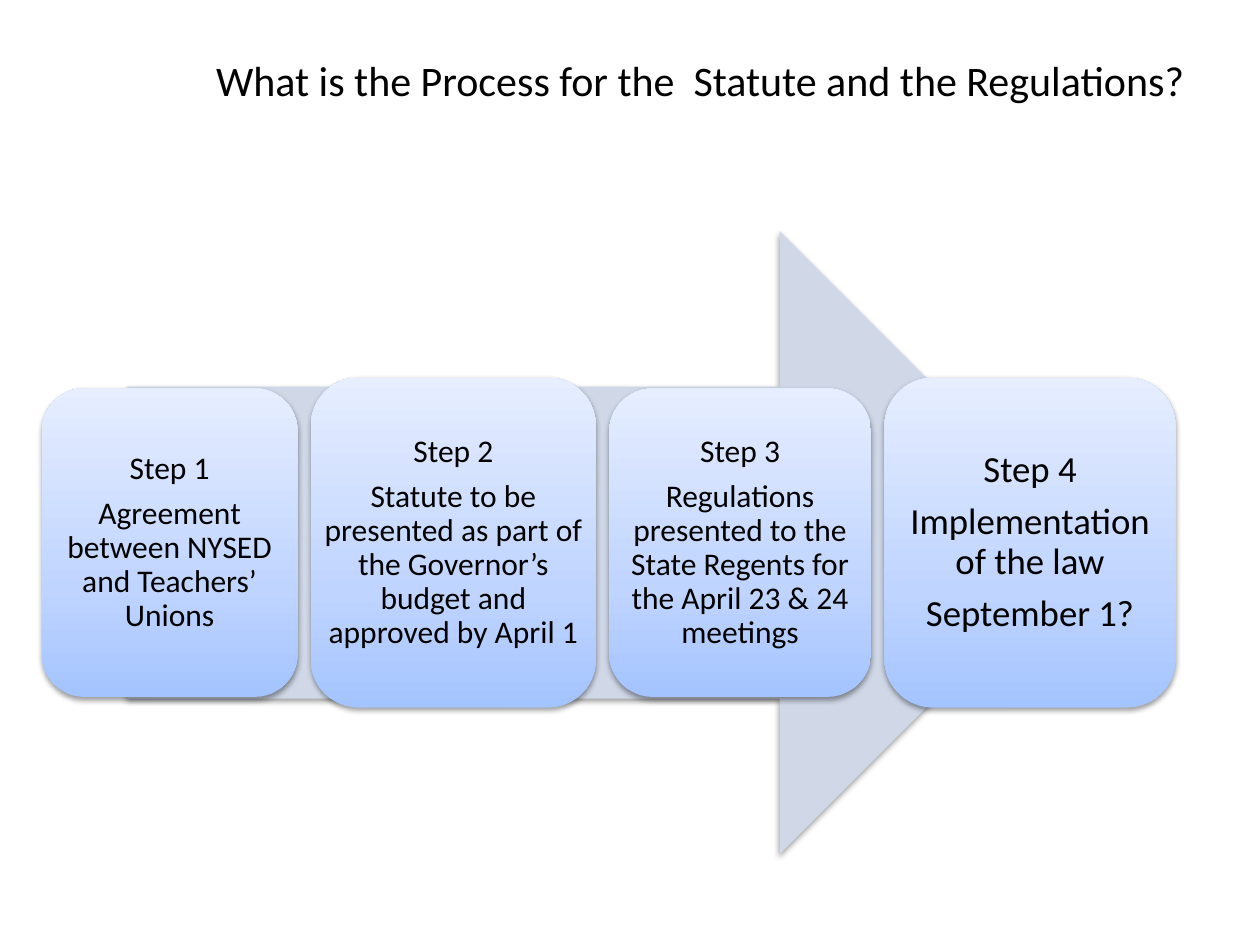
"""Build a one-slide process diagram: four steps along a broad arrow."""
import copy

import pptx
import pptx.dml.color
import pptx.enum.shapes
import pptx.enum.text
import pptx.oxml
import pptx.oxml.ns
import pptx.util

Cm = pptx.util.Cm
Pt = pptx.util.Pt
ALIGN = pptx.enum.text.PP_ALIGN
SHAPE = pptx.enum.shapes.MSO_SHAPE
COLORS = {"text": "000000", "arrow": "D0D8E8", "shadow": "000000",
          "bottom": "A4C4FF", "middle": "BFD4FF", "top": "E6EEFF"}
CENTER, GAP = 10.94, 0.27


def write(frame, text, size=18, align=ALIGN.CENTER, inset=0.18, line=0.9, after=0.35):
    """Fill a text frame with one paragraph per line of text."""
    frame.word_wrap = True
    frame.vertical_anchor = pptx.enum.text.MSO_ANCHOR.MIDDLE
    frame.margin_left = frame.margin_right = Cm(inset)
    frame.margin_top = frame.margin_bottom = Cm(inset)
    frame.text = text
    for para in frame.paragraphs:
        para.alignment = align
        para.line_spacing = line
        para.space_after = Pt(size * after)
        for span in para.runs:
            span.font.name = "Calibri"
            span.font.size = Pt(size)
            span.font.color.rgb = pptx.dml.color.RGBColor.from_string(COLORS["text"])


def add_shadowed(page, kind, left, width, height):
    """Add a borderless shape on the center line with a soft shadow below."""
    shape = page.shapes.add_shape(kind, Cm(left), Cm(CENTER - height / 2), Cm(width), Cm(height))
    shape.line.fill.background()
    shape.shadow.inherit = False
    effects = shape._element.spPr.find(pptx.oxml.ns.qn("a:effectLst"))
    effects.append(pptx.oxml.parse_xml(
        f'<a:outerShdw {pptx.oxml.ns.nsdecls("a")} blurRad="40000" dist="20000" '
        f'dir="5400000" rotWithShape="0"><a:srgbClr val="{COLORS["shadow"]}">'
        '<a:alpha val="38000"/></a:srgbClr></a:outerShdw>'))
    return shape


deck = pptx.Presentation()
deck.slide_width, deck.slide_height = Cm(25.4), Cm(19.05)
page = deck.slides.add_slide(deck.slide_layouts[5])

title = page.shapes.title
title.left, title.top, title.width, title.height = Cm(1.27), Cm(0.76), Cm(22.86), Cm(1.68)
write(title.text_frame, "What is the Process for the  Statute and the Regulations?",
      size=24, align=ALIGN.RIGHT, inset=0.25, line=1.0, after=0)

arrow = add_shadowed(page, SHAPE.RIGHT_ARROW, 2.57, 19.43, 12.57)
arrow.fill.solid()
arrow.fill.fore_color.rgb = pptx.dml.color.RGBColor.from_string(COLORS["arrow"])

steps = [
    (5.16, 6.22, 18, 0.18, "Step 1\nAgreement between NYSED and Teachers’ Unions"),
    (5.74, 6.65, 18, 0.18, "Step 2\nStatute to be presented as part of the Governor’s "
                           "budget and approved by April 1"),
    (5.28, 6.22, 18, 0.18, "Step 3\nRegulations presented to the State Regents for "
                           "the April 23 & 24 meetings"),
    (5.87, 6.65, 21, 0.23, "Step 4\nImplementation of the law\nSeptember 1?"),
]
left = 0.84
for width, height, size, inset, text in steps:
    card = add_shadowed(page, SHAPE.ROUNDED_RECTANGLE, left, width, height)
    card.fill.gradient()
    card.fill.gradient_angle = 90
    stop_list = card._element.spPr.find(".//" + pptx.oxml.ns.qn("a:gsLst"))
    stop_list.insert(1, copy.deepcopy(stop_list[0]))
    for stop, position, color in zip(card.fill.gradient_stops, (0, 0.35, 1),
                                     ("bottom", "middle", "top")):
        stop.position = position
        stop.color.rgb = pptx.dml.color.RGBColor.from_string(COLORS[color])
    box = page.shapes.add_textbox(card.left, card.top, card.width, card.height)
    write(box.text_frame, text, size=size, inset=inset)
    left += width + GAP

deck.save("out.pptx")
